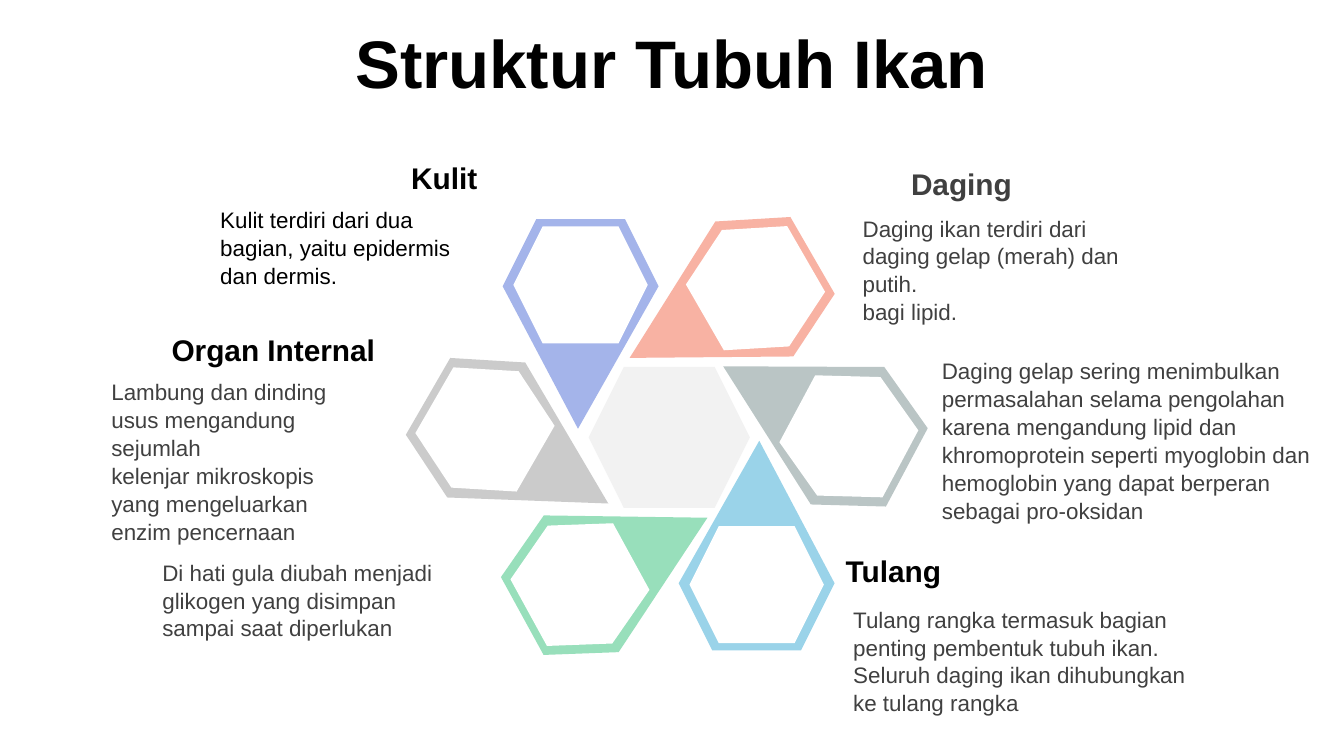
import math

import pptx
import pptx.dml.color
import pptx.enum.shapes
import pptx.enum.text
import pptx.util

RGBColor = pptx.dml.color.RGBColor
BLACK = RGBColor(0x00, 0x00, 0x00)
CHARCOAL = RGBColor(0x40, 0x40, 0x40)
WHITE = RGBColor(0xFF, 0xFF, 0xFF)
PALE_GREY = RGBColor(0xF2, 0xF2, 0xF2)
BLUE = RGBColor(0xA4, 0xB4, 0xEA)
CORAL = RGBColor(0xF8, 0xB2, 0xA3)
SAGE = RGBColor(0xBA, 0xC5, 0xC5)
SKY = RGBColor(0x9A, 0xD3, 0xE9)
GREEN = RGBColor(0x98, 0xDF, 0xBB)
GREY = RGBColor(0xCB, 0xCB, 0xCB)

FONT = "Arial"
LEFT = pptx.enum.text.PP_ALIGN.LEFT
CENTER = pptx.enum.text.PP_ALIGN.CENTER
RIGHT = pptx.enum.text.PP_ALIGN.RIGHT

# The page is a grid of 100 columns by 56.25 rows.
COLUMNS, ROWS = 100, 56.25

# Petal outline pointing up, in hundredths of a grid cell's ten-fold (inch / 100).
PETAL_OUTLINE = [(91, 156), (25, 156), (0, 106), (60, 0), (116, 106)]
PETAL_WIDTH, PETAL_HEIGHT = 11.6, 15.6
WINDOW_WIDTH, WINDOW_HEIGHT = 10, 8.7
WINDOW_OFFSET = 2.9

# Centre column, centre row, rotation, colour
PETALS = [
    (43.2, 24.1, 180, BLUE),
    (53.7, 22.9, 240, CORAL),
    (60.6, 31.1, 298.1, SAGE),
    (56.3, 40.6, 0, SKY),
    (45.7, 42.1, 61.3, GREEN),
    (38.6, 33.4, 120, GREY),
]

# Column, row, text, alignment, colour
HEADINGS = [
    (15.4, 11.3, "Kulit", RIGHT, BLACK),
    (7.8, 24.1, "Organ Internal", RIGHT, BLACK),
    (49.9, 40.5, "Tulang", RIGHT, BLACK),
    (66.8, 11.7, "Daging", LEFT, CHARCOAL),
]

# Column, row, width, height, colour, paragraphs
NOTES = [
    (15.4, 14.8, 21.1, 7.1, BLACK,
     ["Kulit terdiri dari dua bagian, yaitu epidermis", "dan dermis."]),
    (7.3, 27.6, 21.1, 13.1, CHARCOAL,
     ["Lambung dan dinding usus mengandung sejumlah",
      "kelenjar mikroskopis yang mengeluarkan enzim pencernaan"]),
    (62.5, 44.5, 29.2, 9.1, CHARCOAL,
     ["Tulang rangka termasuk bagian penting pembentuk tubuh ikan. "
      "Seluruh daging ikan dihubungkan", "ke tulang rangka"]),
    (63.2, 15.4, 21.1, 9.1, CHARCOAL,
     ["Daging ikan terdiri dari daging gelap (merah) dan putih.", "bagi lipid."]),
    (11.1, 41, 22.3, 7.1, CHARCOAL,
     ["Di hati gula diubah menjadi glikogen yang disimpan",
      "sampai saat diperlukan"]),
    (69.1, 26, 30.6, 13.1, CHARCOAL,
     ["Daging gelap sering menimbulkan",
      "permasalahan selama pengolahan",
      "karena mengandung lipid dan",
      "khromoprotein seperti myoglobin dan hemoglobin yang dapat berperan",
      "sebagai pro-oksidan"]),
]


def cells(*counts):
    """Turn numbers of grid cells into lengths."""
    return [pptx.util.Inches(count / 10) for count in counts]


def paint(shape, color):
    shape.shadow.inherit = False
    shape.fill.solid()
    shape.fill.fore_color.rgb = color
    shape.line.fill.background()


def format_paragraph(paragraph, size, color, align, bold):
    paragraph.alignment = align
    paragraph.font.name = FONT
    paragraph.font.size = pptx.util.Pt(size)
    paragraph.font.bold = bold
    paragraph.font.color.rgb = color


def add_title(page, text):
    title = page.shapes.title
    title.left, title.top, title.width, title.height = cells(0, 1.4, COLUMNS, 6.3)
    frame = title.text_frame
    frame.text = text
    frame.auto_size = pptx.enum.text.MSO_AUTO_SIZE.NONE
    frame.vertical_anchor = pptx.enum.text.MSO_ANCHOR.MIDDLE
    format_paragraph(frame.paragraphs[0], 36, BLACK, CENTER, True)


def add_hexagon(shapes, center_column, center_row, width, height, color, rotation=0):
    hexagon = shapes.add_shape(
        pptx.enum.shapes.MSO_SHAPE.HEXAGON,
        *cells(center_column - width / 2, center_row - height / 2, width, height))
    hexagon.rotation = rotation
    paint(hexagon, color)


def add_petal(page, center_column, center_row, rotation, color):
    """Add a pointed hexagon with a white window in its wide part."""
    group = page.shapes.add_group_shape()
    builder = group.shapes.build_freeform(
        *PETAL_OUTLINE[0], scale=pptx.util.Inches(0.01))
    builder.add_line_segments(PETAL_OUTLINE[1:], close=True)
    petal = builder.convert_to_shape(
        *cells(center_column - PETAL_WIDTH / 2, center_row - PETAL_HEIGHT / 2))
    petal.rotation = rotation
    paint(petal, color)

    angle = math.radians(rotation)
    add_hexagon(group.shapes,
                center_column - WINDOW_OFFSET * math.sin(angle),
                center_row + WINDOW_OFFSET * math.cos(angle),
                WINDOW_WIDTH, WINDOW_HEIGHT, WHITE, (rotation + 180) % 360)


def add_text(page, place, lines, size, color, align=LEFT, bold=False):
    frame = page.shapes.add_textbox(*cells(*place)).text_frame
    frame.word_wrap = True
    frame.auto_size = pptx.enum.text.MSO_AUTO_SIZE.SHAPE_TO_FIT_TEXT
    frame.text = "\n".join(lines)
    for paragraph in frame.paragraphs:
        paragraph.line_spacing = 1.04
        format_paragraph(paragraph, size, color, align, bold)


def main():
    deck = pptx.Presentation()
    deck.slide_width, deck.slide_height = cells(COLUMNS, ROWS)
    page = deck.slides.add_slide(deck.slide_layouts.get_by_name("Title Only"))

    add_title(page, "Struktur Tubuh Ikan")
    add_hexagon(page.shapes, 49.8, 32.55, 12, 10.5, PALE_GREY)
    for petal in PETALS:
        add_petal(page, *petal)
    for column, row, text, align, color in HEADINGS:
        add_text(page, (column, row, 21.1, 3.7), [text], 16, color, align, True)
    for column, row, width, height, color, lines in NOTES:
        add_text(page, (column, row, width, height), lines, 12, color)

    deck.save("out.pptx")


if __name__ == "__main__":
    main()
